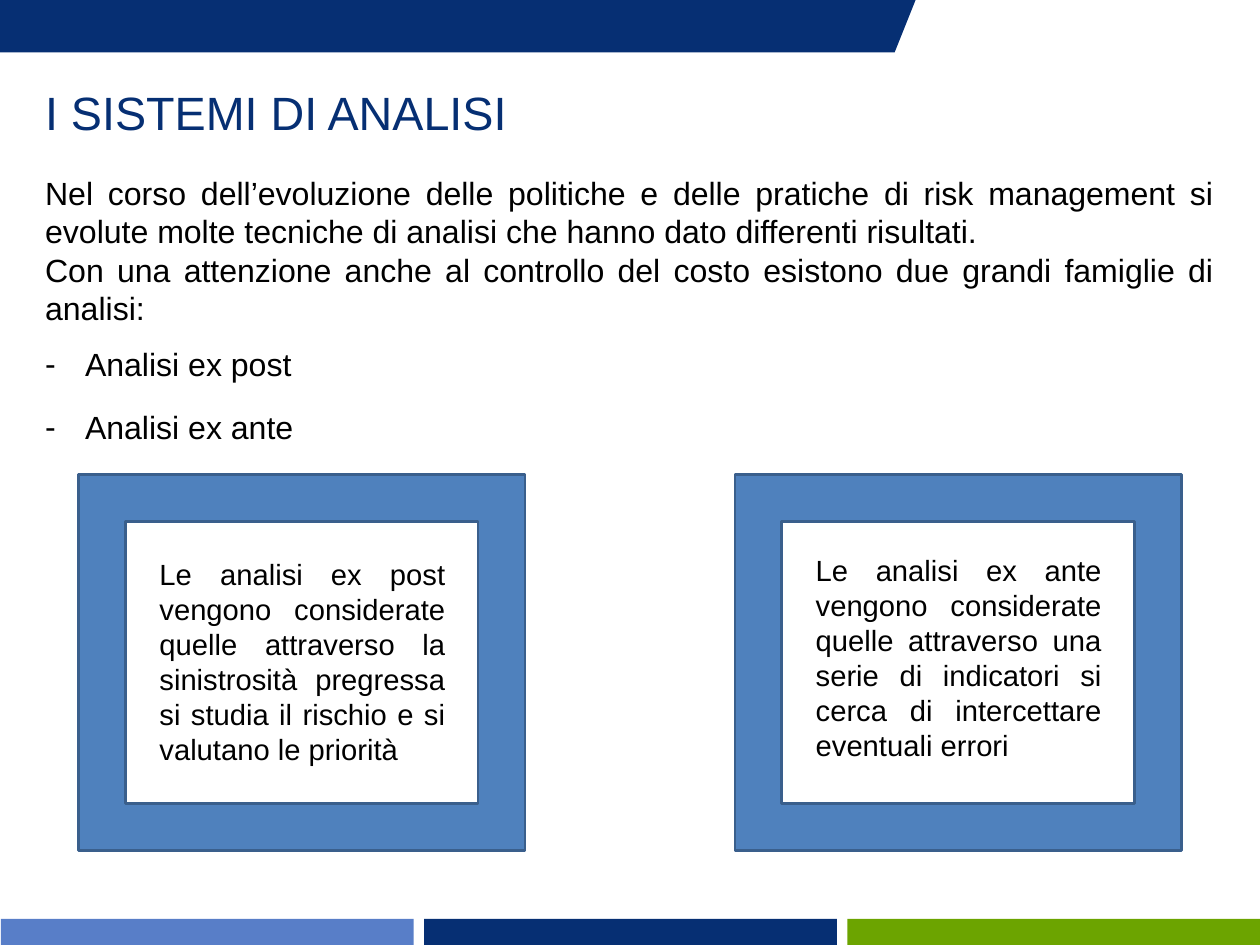
from dataclasses import dataclass

from lxml import etree
from pptx import Presentation
from pptx.dml.color import RGBColor
from pptx.enum.shapes import MSO_SHAPE
from pptx.enum.text import MSO_ANCHOR, MSO_AUTO_SIZE, PP_ALIGN
from pptx.oxml.ns import qn
from pptx.util import Inches, Pt

RECTANGLE, FRAME = MSO_SHAPE.RECTANGLE, MSO_SHAPE.FRAME
TOP, NO_FIT = MSO_ANCHOR.TOP, MSO_AUTO_SIZE.NONE
LEFT, JUSTIFY = PP_ALIGN.LEFT, PP_ALIGN.JUSTIFY


@dataclass(frozen=True)
class Theme:
    """Colours, font and type sizes of the deck."""
    navy: str = "062F73"
    sky: str = "587EC8"
    green: str = "6CA400"
    frame: str = "4F81BD"
    frame_line: str = "3A5F8C"
    black: str = "000000"
    font: str = "Arial"
    title_size: int = 32
    body_size: int = 22
    panel_size: int = 20
    line_factor: float = 1.2


THEME = Theme()
WIDTH, HEIGHT = 12, 9
TITLE = "I SISTEMI DI ANALISI"
INTRO = [
    "Nel corso dell’evoluzione delle politiche e delle pratiche di risk management si evolute "
    "molte tecniche di analisi che hanno dato differenti risultati.",
    "Con una attenzione anche al controllo del costo esistono due grandi famiglie di analisi:",
]
FAMILIES = [("Analisi ex post", 12), ("Analisi ex ante", 16.8)]
PANELS = [
    ("Le analisi ex post vengono considerate quelle attraverso la sinistrosità pregressa "
     "si studia il rischio e si valutano le priorità", 0.73),
    ("Le analisi ex ante vengono considerate quelle attraverso una serie di indicatori "
     "si cerca di intercettare eventuali errori", 0.69),
]


def place(shape, box):
    """Move a shape to a box of left, top, width and height in inches."""
    shape.left, shape.top, shape.width, shape.height = map(Inches, box)


def paint(shape, color):
    """Fill a shape with one colour, without outline or shadow."""
    shape.shadow.inherit = False
    shape.fill.solid()
    shape.fill.fore_color.rgb = RGBColor.from_string(color)
    shape.line.fill.background()


def prepare_frame(frame):
    """Make a text frame wrap from its top at a fixed size."""
    frame.word_wrap = True
    frame.auto_size = NO_FIT
    frame.vertical_anchor = TOP


def format_para(para, size, color, align, before=0):
    """Set alignment, spacing and font of a paragraph."""
    para.alignment = align
    para.line_spacing = Pt(size * THEME.line_factor)
    para.space_before, para.space_after = Pt(before), Pt(0)
    for span in para.runs:
        span.font.name = THEME.font
        span.font.size = Pt(size)
        span.font.color.rgb = RGBColor.from_string(color)


def set_bullet(para, mark=None, indent=0):
    """Give a paragraph a hanging bullet, or none."""
    properties = para._p.get_or_add_pPr()
    properties.set("marL", str(Inches(indent)))
    properties.set("indent", str(-Inches(indent)))
    bullet = etree.SubElement(properties, qn("a:buChar" if mark else "a:buNone"))
    if mark:
        bullet.set("char", mark)


def add_header(page, box):
    """Draw the top band with its slanted right end."""
    left, top, width, height = box
    slant = 0.2
    builder = page.shapes.build_freeform(Inches(left), Inches(top))
    corners = [(left + width, top), (left + width - slant, top + height), (left, top + height)]
    builder.add_line_segments([(Inches(x), Inches(y)) for x, y in corners])
    paint(builder.convert_to_shape(), THEME.navy)


def add_footer(page, box):
    """Draw the three equal stripes at the foot."""
    left, top, width, height = box
    gap = 0.1
    stripe = (width - 2 * gap) / 3
    for column, color in enumerate((THEME.sky, THEME.navy, THEME.green)):
        cell = (left + column * (stripe + gap), top, stripe, height)
        paint(page.shapes.add_shape(RECTANGLE, *map(Inches, cell)), color)


def add_title(page, box):
    """Fill the title placeholder."""
    title = page.shapes.title
    place(title, box)
    title.text_frame.text = TITLE
    prepare_frame(title.text_frame)
    format_para(title.text_frame.paragraphs[0], THEME.title_size, THEME.navy, LEFT)


def add_body(page, box):
    """Fill the body placeholder with the introduction and the list."""
    body = page.placeholders[1]
    place(body, box)
    frame = body.text_frame
    frame.text = "\n".join(INTRO + [name for name, _ in FAMILIES])
    prepare_frame(frame)
    for para in frame.paragraphs[:len(INTRO)]:
        format_para(para, THEME.body_size, THEME.black, JUSTIFY)
        set_bullet(para)
    for para, (_, before) in zip(frame.paragraphs[len(INTRO):], FAMILIES):
        format_para(para, THEME.body_size, THEME.black, JUSTIFY, before)
        set_bullet(para, "-", 0.38)


def add_panel(page, box, text, text_offset):
    """Draw one frame with its text inside."""
    left, top, width, _ = box
    border = page.shapes.add_shape(FRAME, *map(Inches, box))
    paint(border, THEME.frame)
    border.line.color.rgb = RGBColor.from_string(THEME.frame_line)
    border.line.width = Pt(2)
    margin = 0.67
    area = (left + margin, top + text_offset, width - 2 * margin + 0.01, 2.12)
    frame = page.shapes.add_textbox(*map(Inches, area)).text_frame
    frame.text = text
    prepare_frame(frame)
    format_para(frame.paragraphs[0], THEME.panel_size, THEME.black, JUSTIFY)


def main():
    """Build and save the deck."""
    deck = Presentation()
    deck.slide_width, deck.slide_height = Inches(WIDTH), Inches(HEIGHT)
    page = deck.slides.add_slide(deck.slide_layouts[1])
    add_footer(page, (0.01, HEIGHT - 0.25, WIDTH - 0.01, 0.25))
    add_header(page, (0, 0, 8.72, 0.5))
    add_title(page, (0.33, 0.75, 8.25, 0.6))
    add_body(page, (0.33, 1.6, 11.33, 2.98))
    panel_width, side = 4.25, 0.75
    for left, (text, offset) in zip((side, WIDTH - side - panel_width), PANELS):
        add_panel(page, (left, 4.52, panel_width, 3.58), text, offset)
    deck.save("out.pptx")


if __name__ == "__main__":
    main()
